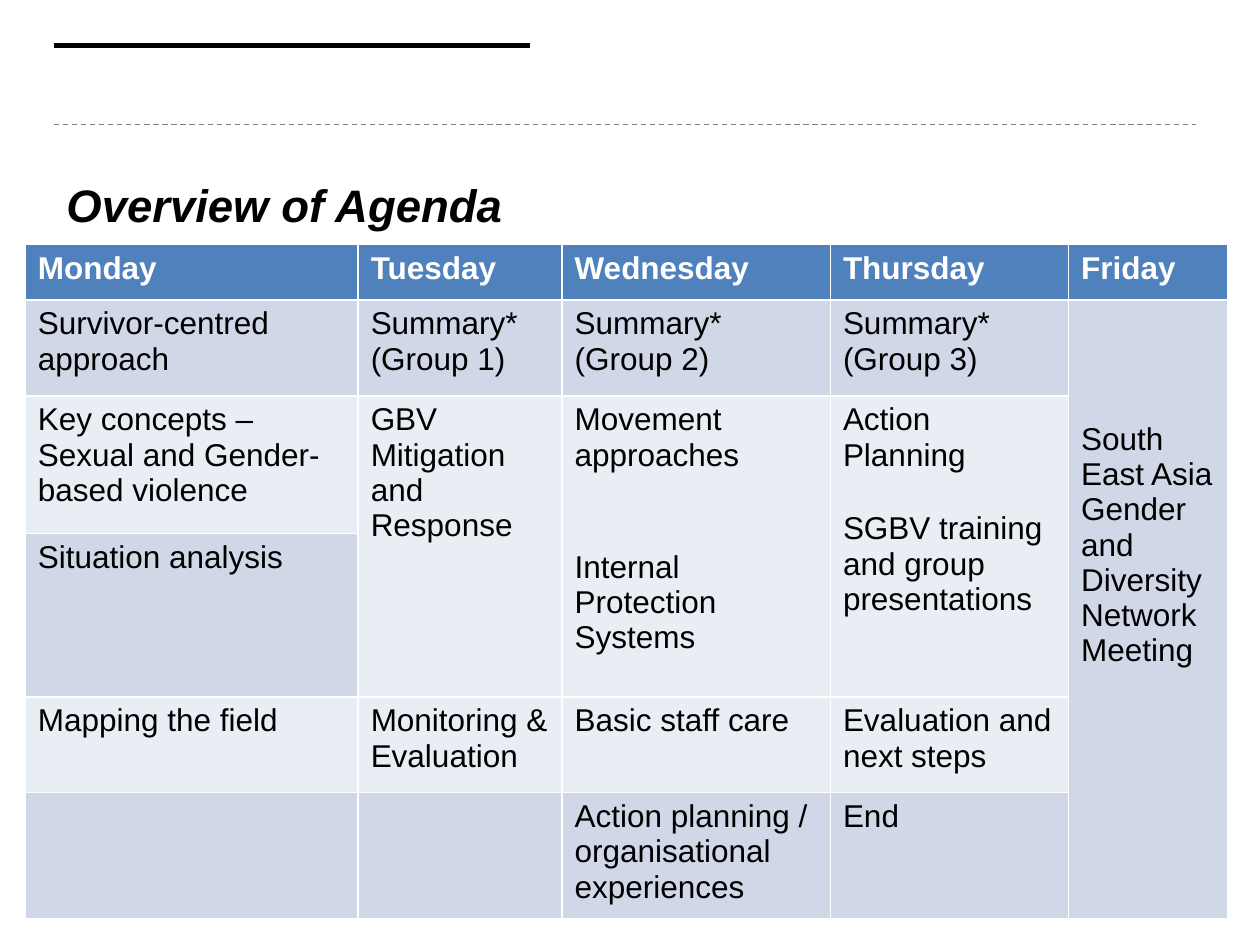
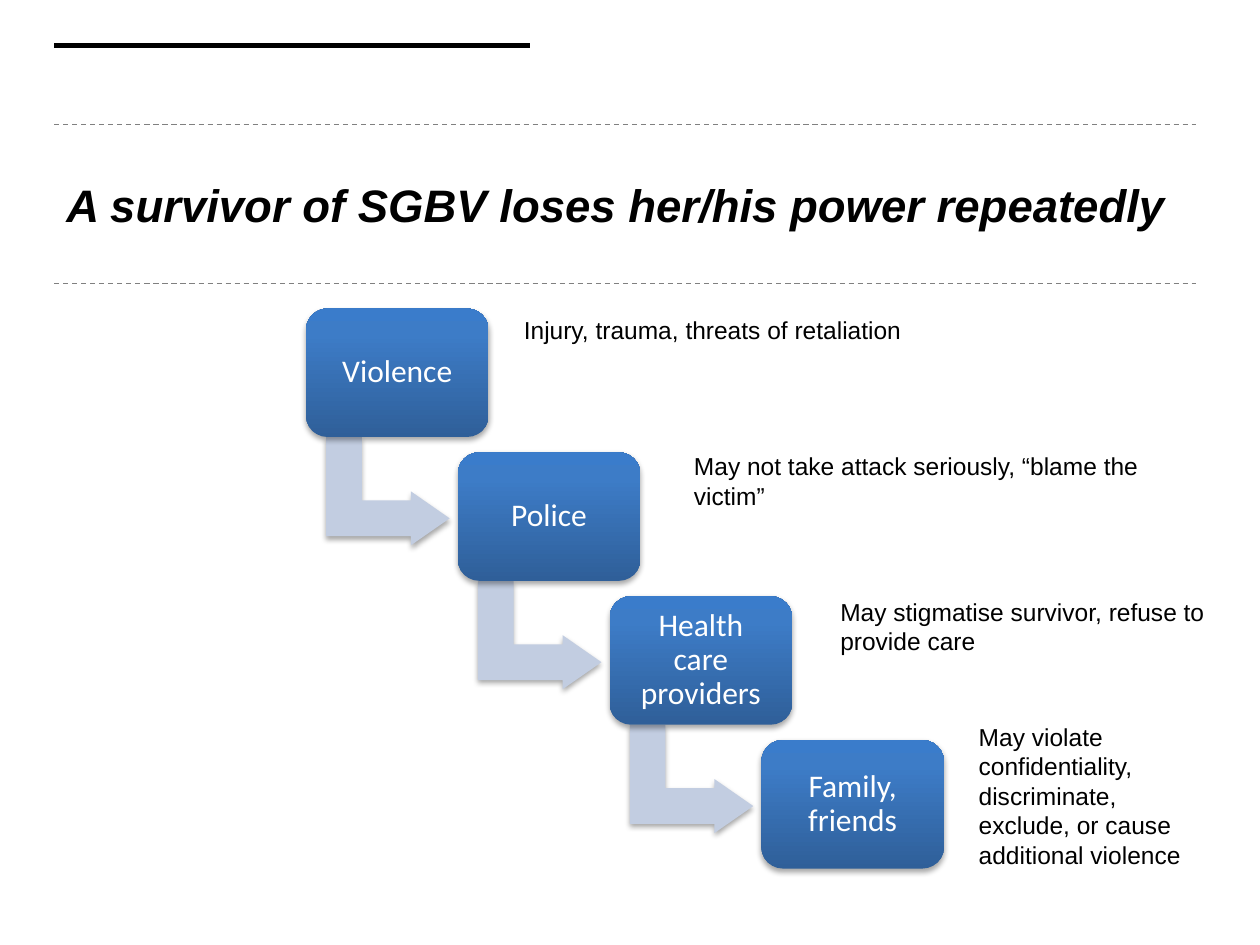
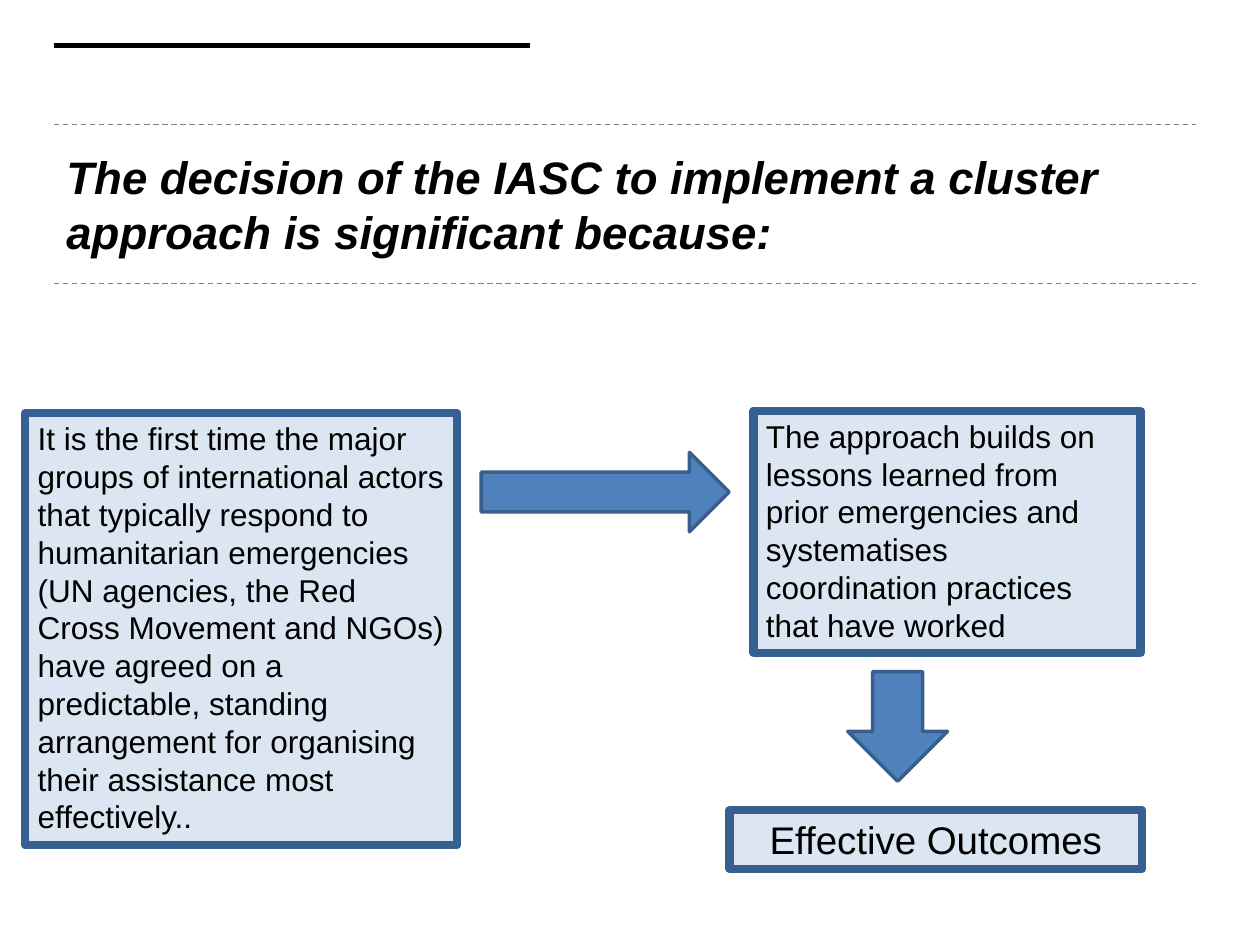
from pptx import Presentation
from pptx.dml.color import RGBColor
from pptx.enum.dml import MSO_LINE
from pptx.enum.shapes import MSO_CONNECTOR, MSO_SHAPE
from pptx.enum.text import MSO_ANCHOR, PP_ALIGN
from pptx.oxml import parse_xml
from pptx.oxml.ns import nsdecls, qn
from pptx.util import Cm, Pt

STRAIGHT = MSO_CONNECTOR.STRAIGHT
DASH = MSO_LINE.DASH
RECT, ROUND_RECT = MSO_SHAPE.RECTANGLE, MSO_SHAPE.ROUNDED_RECTANGLE
RIGHT_ARROW, BENT_ARROW = MSO_SHAPE.RIGHT_ARROW, MSO_SHAPE.BENT_UP_ARROW
LEFT, CENTER = PP_ALIGN.LEFT, PP_ALIGN.CENTER
TOP, MIDDLE = MSO_ANCHOR.TOP, MSO_ANCHOR.MIDDLE

BLACK = RGBColor(0x00, 0x00, 0x00)
WHITE = RGBColor(0xFF, 0xFF, 0xFF)
GRAY = RGBColor(0x80, 0x80, 0x80)
BLUE = RGBColor(0x4F, 0x81, 0xBD)
ARROW_EDGE = RGBColor(0x3A, 0x5F, 0x8C)
BOX_EDGE = RGBColor(0x37, 0x60, 0x92)
BOX_FILL = RGBColor(0xDC, 0xE6, 0xF2)
BAND_DARK = RGBColor(0xD0, 0xD8, 0xE8)
BAND_LIGHT = RGBColor(0xE9, 0xED, 0xF4)
STEP_ARROW = RGBColor(0xC2, 0xCD, 0xE1)
STEP_STOPS = (
    (0, RGBColor(0x2F, 0x5F, 0x99)),
    (80, RGBColor(0x3D, 0x7C, 0xC7)),
    (100, RGBColor(0x3A, 0x7C, 0xCB)),
)


def write(tf, text, size=18, font="Arial", color=BLACK, bold=False, italic=False,
          align=LEFT, anchor=TOP, gap=0, leading=None, inset=None):
    """Fill a text frame, one paragraph per line; gap is the space between them."""
    tf.word_wrap = True
    tf.vertical_anchor = anchor
    if inset is not None:
        tf.margin_left = tf.margin_right = tf.margin_top = tf.margin_bottom = Cm(inset)
    for i, line in enumerate(text.split("\n")):
        p = tf.add_paragraph() if i else tf.paragraphs[0]
        p.alignment = align
        if i and gap:
            p.space_before = Pt(gap)
        if leading:
            p.line_spacing = leading
        r = p.add_run()
        r.text = line
        r.font.name, r.font.size = font, Pt(size)
        r.font.bold, r.font.italic = bold, italic
        r.font.color.rgb = color


def add_text(s, box, text, **fmt):
    sp = s.shapes.add_textbox(*map(Cm, box))
    write(sp.text_frame, text, **fmt)


def add_shape(s, kind, box, fill=None, edge=None, weight=0, rotation=0):
    sp = s.shapes.add_shape(kind, *map(Cm, box))
    sp.shadow.inherit = False
    sp.rotation = rotation
    if fill is not None:
        sp.fill.solid()
        sp.fill.fore_color.rgb = fill
    if edge is None:
        sp.line.fill.background()
    else:
        sp.line.color.rgb = edge
        sp.line.width = Pt(weight)
    return sp


def add_rule(s, x, y, width, color, weight, dash=None):
    line = s.shapes.add_connector(STRAIGHT, Cm(x), Cm(y), Cm(x + width), Cm(y))
    line.line.color.rgb = color
    line.line.width = Pt(weight)
    if dash:
        line.line.dash_style = dash
    line._element.spPr.append(parse_xml(f"<a:effectLst {nsdecls('a')}/>"))


def add_soft_shadow(sp):
    sp._element.spPr.find(qn("a:effectLst")).append(parse_xml(
        f'<a:outerShdw {nsdecls("a")} blurRad="40000" dist="23000" dir="5400000" '
        'rotWithShape="0"><a:srgbClr val="000000"><a:alpha val="35000"/>'
        '</a:srgbClr></a:outerShdw>'))


def fill_gradient(sp, stops):
    """Gradient that runs from the bottom edge upwards."""
    stop_xml = "".join(f'<a:gs pos="{pos * 1000}"><a:srgbClr val="{color}"/></a:gs>'
                       for pos, color in stops)
    sp._element.spPr.find(qn("a:prstGeom")).addnext(parse_xml(
        f'<a:gradFill {nsdecls("a")} rotWithShape="1"><a:gsLst>{stop_xml}</a:gsLst>'
        '<a:lin ang="16200000" scaled="0"/></a:gradFill>'))


def new_slide(prs, title):
    """Blank slide with the shared rules and title."""
    s = prs.slides.add_slide(prs.slide_layouts[6])
    x, y, width, height = 1.09, 2.51, 23.01, 3.2
    add_rule(s, x, 0.91, 9.6, BLACK, 3)
    add_rule(s, x, y + height, width, GRAY, 0.75, DASH)
    add_rule(s, x, y, width, GRAY, 0.75, DASH)
    add_text(s, (x, y, width, height), title, size=26, bold=True, italic=True,
             anchor=MIDDLE)
    return s


# Agenda table: None marks a cell covered by the one above
AGENDA = [
    ["Monday", "Tuesday", "Wednesday", "Thursday", "Friday"],
    ["Survivor-centred approach", "Summary*\n(Group 1)", "Summary*\n(Group 2)",
     "Summary*\n(Group 3)", "South East Asia Gender and Diversity Network Meeting"],
    ["Key concepts – Sexual and Gender-based violence",
     "GBV Mitigation and Response",
     "Movement approaches\nInternal Protection Systems",
     "Action Planning\nSGBV training and group presentations", None],
    ["Situation analysis", None, None, None, None],
    ["Mapping the field", "Monitoring & Evaluation", "Basic staff care",
     "Evaluation and next steps", None],
    ["", "", "Action planning / organisational experiences", "End", None],
]
SESSION_GAPS = {(2, 2): 44, (2, 3): 22}
FRIDAY = (1, 4)


def agenda_table(s, x, y, widths, heights):
    table = s.shapes.add_table(len(heights), len(widths), Cm(x), Cm(y),
                               Cm(sum(widths)), Cm(sum(heights))).table
    for column, width in zip(table.columns, widths):
        column.width = Cm(width)
    for row, height in zip(table.rows, heights):
        row.height = Cm(height)
    for i, row in enumerate(AGENDA):
        for j, text in enumerate(row):
            cell = table.cell(i, j)
            cell.fill.solid()
            cell.fill.fore_color.rgb = (BAND_DARK if i % 2 else BAND_LIGHT) if i else BLUE
            if text is None:
                continue
            write(cell.text_frame, text, color=BLACK if i else WHITE, bold=i == 0,
                  gap=SESSION_GAPS.get((i, j), 0))
            last = i
            while last + 1 < len(AGENDA) and AGENDA[last + 1][j] is None:
                last += 1
            if last > i:
                cell.merge(table.cell(last, j))
    table.cell(*FRIDAY).margin_top = Cm(2.45)


# Steps with the box of the note beside each
STEPS = [
    ("Violence", "Injury, trauma, threats of retaliation", (10.31, 6.22, 10.8, 0.86)),
    ("Police", "May not take attack seriously, “blame the victim”",
     (13.74, 8.97, 10.8, 1.45)),
    ("Health care providers", "May stigmatise survivor, refuse to provide care",
     (16.69, 11.91, 8, 1.45)),
    ("Family, friends",
     "May violate confidentiality, discriminate, exclude, or cause additional violence",
     (19.48, 14.43, 5.21, 3.25)),
]


def staircase(s, x, y, step_x=3.06, step_y=2.9):
    for i, (label, note, note_box) in enumerate(STEPS):
        left, top = x + i * step_x, y + i * step_y
        # Arrow down to the next step
        if i < len(STEPS) - 1:
            arrow = add_shape(s, BENT_ARROW, (left + 0.56, top + 2.44, 2.18, 2.49),
                              STEP_ARROW, rotation=90)
            for k, value in enumerate((0.33, 0.25, 0.36)):
                arrow.adjustments[k] = value
            add_soft_shadow(arrow)
        # Step box and its note
        sp = add_shape(s, ROUND_RECT, (left, top, 3.68, 2.59))
        fill_gradient(sp, STEP_STOPS)
        add_soft_shadow(sp)
        write(sp.text_frame, label, font="Calibri", color=WHITE, align=CENTER,
              anchor=MIDDLE, leading=0.9, inset=0.25)
        add_text(s, note_box, note, size=14)


REASONS = [
    ((0.51, 8.33, 8.71, 8.71), 18, LEFT,
     "It is the first time the major groups of international actors that typically "
     "respond to humanitarian emergencies (UN agencies, the Red Cross Movement and "
     "NGOs) have agreed on a predictable, standing arrangement for organising their "
     "assistance most effectively.."),
    ((15.19, 8.28, 7.8, 4.88), 18, LEFT,
     "The approach builds on lessons learned from prior emergencies and systematises "
     "coordination practices that have worked"),
    ((14.71, 16.33, 8.31, 1.19), 22, CENTER, "Effective Outcomes"),
]
REASON_ARROWS = [((9.7, 9.12, 5, 1.6), 0), ((16.99, 13.64, 2.21, 2.01), 90)]


def reason_flow(s):
    for box, size, align, text in REASONS:
        sp = add_shape(s, RECT, box, BOX_FILL, BOX_EDGE, 4.75)
        write(sp.text_frame, text, size=size, align=align)
    for box, rotation in REASON_ARROWS:
        add_shape(s, RIGHT_ARROW, box, BLUE, ARROW_EDGE, 2, rotation)


def main():
    prs = Presentation()
    prs.slide_width, prs.slide_height = Cm(25.4), Cm(19.05)

    s = new_slide(prs, "Overview of Agenda")
    agenda_table(s, 0.51, 4.93, widths=(6.71, 4.11, 5.41, 4.8, 3.2),
                 heights=(1.12, 1.93, 2.77, 3.3, 1.93, 2.39))

    s = new_slide(prs, "A survivor of SGBV loses her/his power repeatedly")
    staircase(s, 6.17, 6.22)

    s = new_slide(prs, "The decision of the IASC to implement a cluster approach "
                       "is significant because:")
    reason_flow(s)

    prs.save("out.pptx")


if __name__ == "__main__":
    main()
